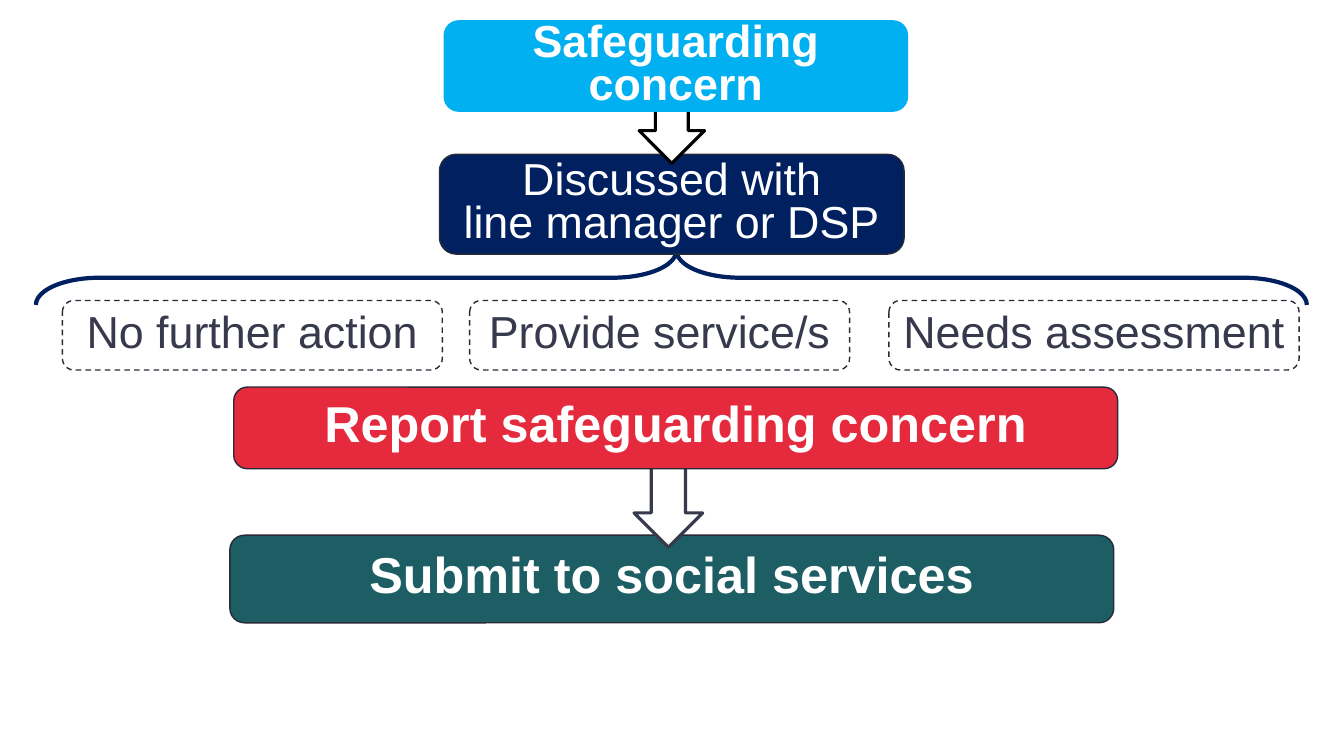
from dataclasses import dataclass
from typing import Optional

from pptx import Presentation
from pptx.dml.color import RGBColor
from pptx.enum.dml import MSO_LINE
from pptx.enum.shapes import MSO_SHAPE
from pptx.enum.text import MSO_ANCHOR, PP_ALIGN
from pptx.util import Pt

ROUNDED = MSO_SHAPE.ROUNDED_RECTANGLE
DOWN_ARROW = MSO_SHAPE.DOWN_ARROW
RIGHT_BRACE = MSO_SHAPE.RIGHT_BRACE
DASH = MSO_LINE.DASH
MIDDLE = MSO_ANCHOR.MIDDLE
CENTER = PP_ALIGN.CENTER

COLORS = {
    "white": "FFFFFF",
    "black": "000000",
    "sky": "00B0F0",
    "navy": "002060",
    "red": "E52A3D",
    "teal": "1C5E64",
    "outline": "292A38",
    "slate": "37394C",
}


@dataclass(frozen=True)
class Step:
    text: str
    left: float
    top: float
    width: float
    height: float
    fill: str
    line: Optional[str] = "outline"
    dashed: bool = False
    size: float = 32
    bold: bool = False
    color: str = "white"


@dataclass(frozen=True)
class Arrow:
    left: float
    top: float
    width: float
    height: float
    line: str


def rgb(name: str) -> RGBColor:
    return RGBColor.from_string(COLORS[name])


def add_outline(slide, kind, left: float, top: float, width: float, height: float,
                fill: Optional[str], line: Optional[str], weight: float):
    shape = slide.shapes.add_shape(kind, Pt(left), Pt(top), Pt(width), Pt(height))
    shape.shadow.inherit = False
    if fill:
        shape.fill.solid()
        shape.fill.fore_color.rgb = rgb(fill)
    else:
        shape.fill.background()
    if line:
        shape.line.color.rgb = rgb(line)
        shape.line.width = Pt(weight)
    else:
        shape.line.fill.background()
    return shape


def write_text(shape, text: str, *, size: float, bold: bool, color: str) -> None:
    frame = shape.text_frame
    frame.word_wrap = True
    frame.vertical_anchor = MIDDLE
    paragraph = frame.paragraphs[0]
    paragraph.text = text
    paragraph.alignment = CENTER
    paragraph.line_spacing = 0.8
    for run in paragraph.runs:
        run.font.name = "Arial"
        run.font.size = Pt(size)
        run.font.bold = bold
        run.font.color.rgb = rgb(color)


def draw_step(slide, step: Step) -> None:
    box = add_outline(slide, ROUNDED, step.left, step.top, step.width, step.height,
                      step.fill, step.line, 1)
    if step.dashed:
        box.line.dash_style = DASH
    write_text(box, step.text, size=step.size, bold=step.bold, color=step.color)


def draw_arrow(slide, arrow: Arrow) -> None:
    add_outline(slide, DOWN_ARROW, arrow.left, arrow.top, arrow.width, arrow.height,
                "white", arrow.line, 2.25)


def draw_outcome_brace(slide) -> None:
    brace = add_outline(slide, RIGHT_BRACE, 460.1, -255.6, 38.9, 907.9, None, "navy", 3)
    brace.rotation = 270
    brace.adjustments[0] = 1.167
    brace.adjustments[1] = 0.504


def outcome(text: str, left: float, width: float) -> Step:
    return Step(text, left, 214.6, width, 49.7, "white", dashed=True, color="slate")


SUBMIT = Step("Submit to social services", 164.2, 382.3, 631.4, 62.6, "teal",
              size=36, bold=True)
REPORT = Step("Report safeguarding concern", 167, 276.5, 631.4, 58.3, "red",
              size=36, bold=True)
DISCUSSION = Step("Discussed with\nline manager or DSP", 313.9, 110.2, 331.9, 71.3, "navy")
CONCERN = Step("Safeguarding concern", 316.8, 14.4, 331.9, 65.5, "sky",
               line=None, bold=True)
OUTCOMES = [
    outcome("No further action", 44.6, 271.4),
    outcome("Provide service/s", 335.5, 271.4),
    outcome("Needs assessment", 635, 293),
]
REPORT_TO_SUBMIT = Arrow(452.9, 332.6, 49, 58.3, "slate")
CONCERN_TO_DISCUSSION = Arrow(456.5, 67, 46.8, 49.7, "black")


def main() -> None:
    deck = Presentation()
    deck.slide_width, deck.slide_height = Pt(960), Pt(540)
    slide = deck.slides.add_slide(deck.slide_layouts[6])
    draw_step(slide, SUBMIT)
    draw_arrow(slide, REPORT_TO_SUBMIT)
    draw_step(slide, REPORT)
    draw_outcome_brace(slide)
    draw_step(slide, DISCUSSION)
    draw_arrow(slide, CONCERN_TO_DISCUSSION)
    for step in [CONCERN, *OUTCOMES]:
        draw_step(slide, step)
    deck.save("out.pptx")


if __name__ == "__main__":
    main()
